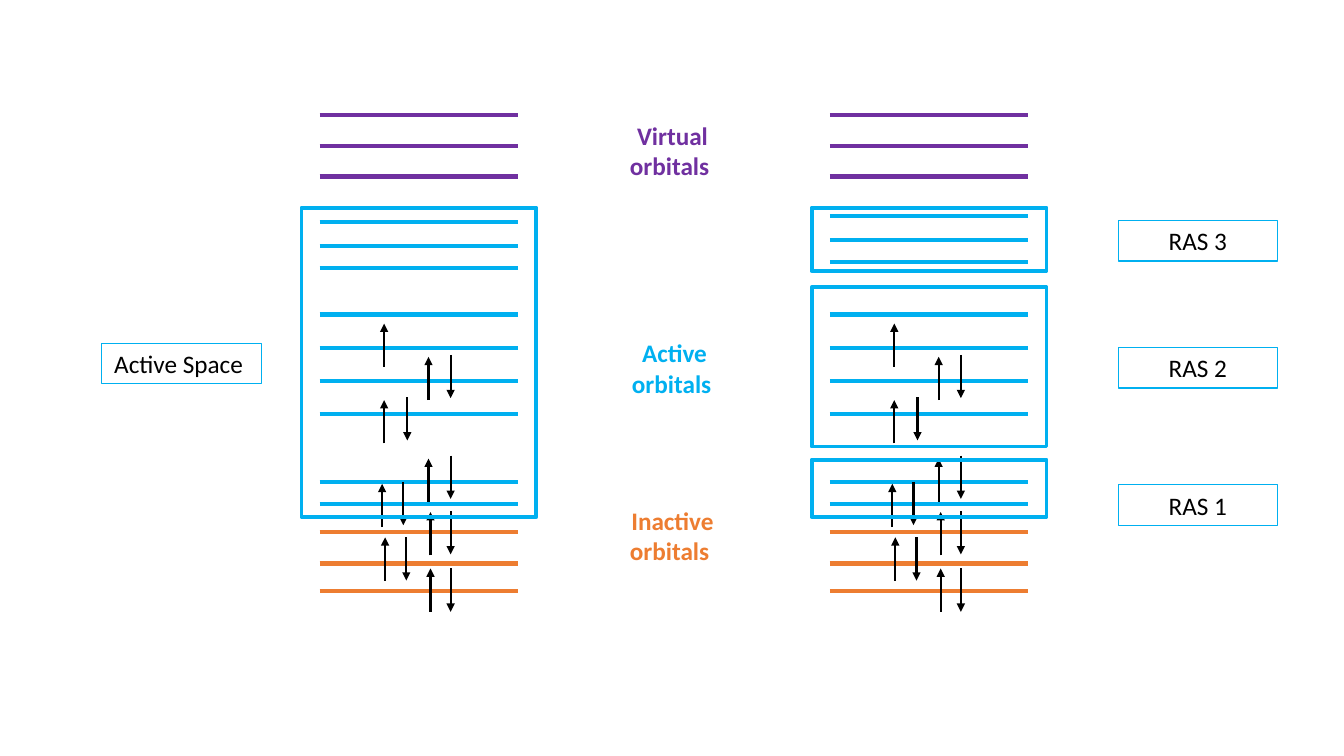
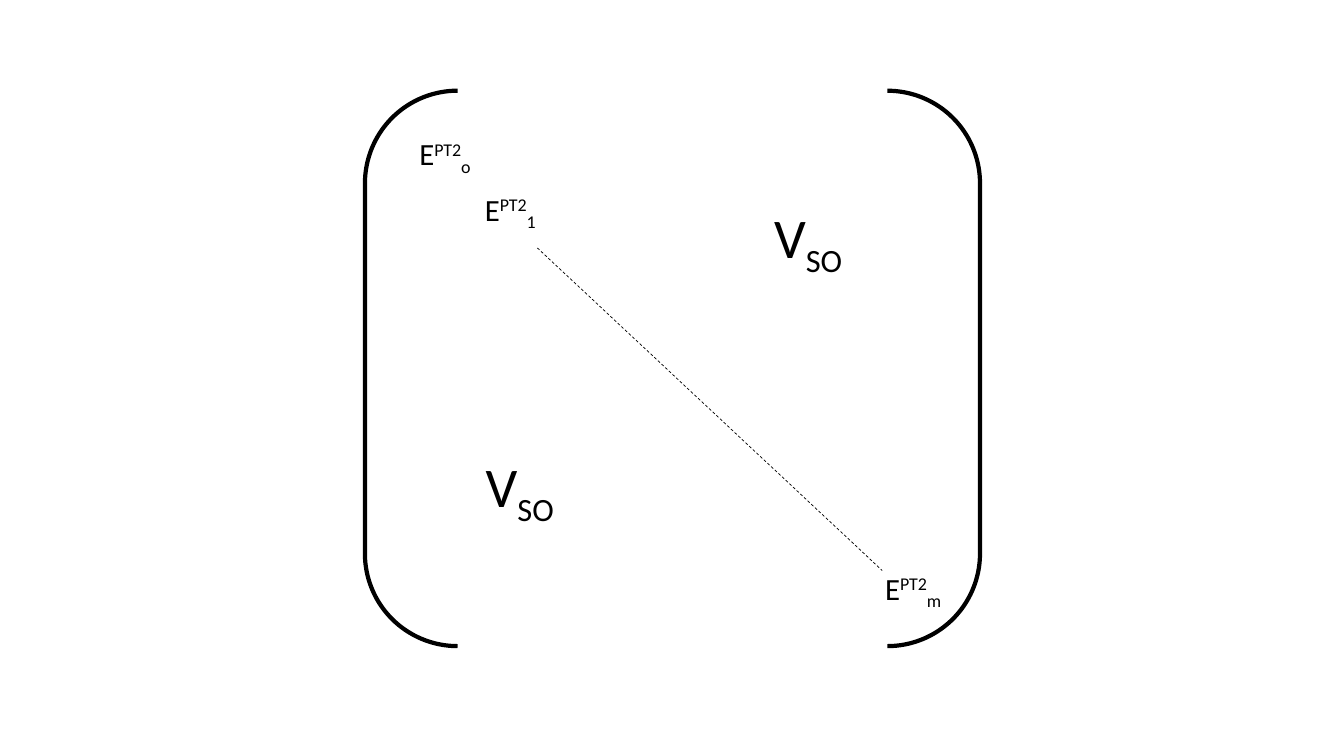
from lxml import etree
from pptx import Presentation
from pptx import util as u
from pptx.dml.color import RGBColor
from pptx.enum import dml, shapes, text
from pptx.oxml import ns

FONT = "Calibri"
BLACK, VIOLET, BLUE, ORANGE = "000000", "7030A0", "00B0F0", "ED7D31"
SUPER, SUB = 30, -25

LEVEL_INSET, LEVEL_WIDTH, FRAME_WIDTH = 0.18, 1.97, 2.33
VIRTUAL_LEVELS = (0, 0.31, 0.61)
UPPER_LEVELS = (0, 0.24, 0.46)
ACTIVE_LEVELS = (1.98, 2.31, 2.64, 2.97, 3.64, 3.86)
INACTIVE_LEVELS = (4.14, 4.45, 4.72)
ARROW_LENGTH = 0.43
UP_ARROWS = ((0.82, 2.07), (1.26, 2.4), (0.82, 2.83), (1.26, 3.41),
             (0.8, 3.66), (1.28, 3.94), (0.83, 4.19), (1.28, 4.5))
DOWN_ARROWS = ((1.48, 2.38), (1.05, 2.8), (1.48, 3.38), (1.01, 3.64),
               (1.48, 3.93), (1.04, 4.19), (1.48, 4.5))


def paint(target, color):
    """Give a line, fill or font a solid colour from a hex string."""
    if hasattr(target, "solid"):
        target.solid()
        target = target.fore_color
    else:
        target = target.color
    target.rgb = RGBColor.from_string(color)


def add_line(page, start, end, color, width, arrow=False, dashed=False):
    """Draw a straight line, with an optional arrowhead or dashes."""
    points = [u.Inches(value) for value in (*start, *end)]
    line = page.shapes.add_connector(shapes.MSO_CONNECTOR.STRAIGHT, *points)
    paint(line.line, color)
    line.line.width = u.Pt(width)
    if dashed:
        line.line.dash_style = dml.MSO_LINE.DASH
    if arrow:
        outline = line.line.fill and line.element.spPr.find(ns.qn("a:ln"))
        etree.SubElement(outline, ns.qn("a:tailEnd"), type="triangle")
    etree.SubElement(line.element.spPr, ns.qn("a:effectLst"))


def add_outline(page, bounds, color, width, kind=shapes.MSO_SHAPE.RECTANGLE):
    """Draw an unfilled preset shape."""
    outline = page.shapes.add_shape(kind, *map(u.Inches, bounds))
    outline.shadow.inherit = False
    outline.fill.background()
    paint(outline.line, color)
    outline.line.width = u.Pt(width)
    return outline


def write(box, spans, size, color=BLACK, bold=False, centered=True):
    """Fill a box with one paragraph of (wording, baseline percent) spans."""
    box.text_frame.word_wrap = True
    box.text_frame.auto_size = text.MSO_AUTO_SIZE.SHAPE_TO_FIT_TEXT
    para = box.text_frame.paragraphs[0]
    para.alignment = text.PP_ALIGN.CENTER if centered else text.PP_ALIGN.LEFT
    para.font.name, para.font.size, para.font.bold = FONT, u.Pt(size), bold
    paint(para.font, color)
    for wording, baseline in spans:
        span = para.add_run()
        span.text = wording
        if baseline:
            span._r.get_or_add_rPr().set("baseline", str(baseline * 1000))


def add_text(page, bounds, spans, size, **style):
    """Place a text box."""
    write(page.shapes.add_textbox(*map(u.Inches, bounds)), spans, size, **style)


def add_tag(page, left, top, wording):
    """Place a thinly outlined name for an orbital space."""
    write(add_outline(page, (left, top, 1.58, 0.4), BLUE, 0.75), [(wording, 0)], 18)


def orbital_column(page, left, top, upper_start, frames):
    """Draw energy levels, electrons and the frames of the active spaces."""
    upper = [upper_start + step for step in UPPER_LEVELS]
    for color, levels in ((VIOLET, VIRTUAL_LEVELS), (BLUE, upper),
                          (BLUE, ACTIVE_LEVELS), (ORANGE, INACTIVE_LEVELS)):
        for level in levels:
            start = left + LEVEL_INSET
            add_line(page, (start, top + level),
                     (start + LEVEL_WIDTH, top + level), color, 3)
    for across, down in UP_ARROWS:
        tip = (left + across, top + down)
        add_line(page, (tip[0], tip[1] + ARROW_LENGTH), tip, BLACK, 1.5, arrow=True)
    for across, down in DOWN_ARROWS:
        start = (left + across, top + down)
        add_line(page, start, (start[0], start[1] + ARROW_LENGTH), BLACK, 1.5, arrow=True)
    for down, height in frames:
        add_outline(page, (left, top + down, FRAME_WIDTH, height), BLUE, 2.75)


def orbital_slide(page):
    """Compare one active space with three restricted active spaces."""
    top = 1.14
    orbital_column(page, 2.99, top, 1.06, [(0.92, 3.07)])
    orbital_column(page, 8.05, top, 1, [(0.92, 0.63), (1.71, 1.58), (3.42, 0.57)])
    add_tag(page, 1.01, 3.41, "Active Space ")
    for tag_top, wording in ((2.19, "RAS 3"), (3.45, "RAS 2"), (4.81, "RAS 1")):
        add_tag(page, 11.09, tag_top, wording)
    for left, label_top, wording, color in (
            (5.9, 1.14, "Virtual orbitals ", VIOLET),
            (5.92, 3.3, "Active orbitals ", BLUE),
            (5.9, 4.96, "Inactive orbitals ", ORANGE)):
        add_text(page, (left, label_top, 1.54, 0.71), [(wording, 0)], 18,
                 color=color, bold=True)


def matrix(page, left, top, width, height):
    """Draw a bracketed matrix with energies on its diagonal."""
    add_outline(page, (left, top, width, height), BLACK, 3,
                shapes.MSO_SHAPE.DOUBLE_BRACKET)
    add_line(page, (left + 1.71, top + 1.56), (left + 5.13, top + 4.76),
             BLACK, 0.5, dashed=True)
    for across, down, index in ((0.44, 0.39, "o"), (1.09, 0.94, "1"), (5.06, 4.7, "m")):
        add_text(page, (left + across, top + down, 1.25, 0.47),
                 [("E", 0), ("PT2", SUPER), (index, SUB)], 22, centered=False)
    for across, down in ((2.88, 1.06), (0.02, 3.53)):
        add_text(page, (left + across, top + down, 3.03, 0.77),
                 [("V", 0), ("SO", SUB)], 40)


def main():
    """Build and save the deck."""
    deck = Presentation()
    deck.slide_width, deck.slide_height = u.Inches(13.33), u.Inches(7.5)
    blank = deck.slide_layouts[6]
    orbital_slide(deck.slides.add_slide(blank))
    matrix(deck.slides.add_slide(blank), 3.62, 0.9, 6.1, 5.51)
    deck.save("out.pptx")


if __name__ == "__main__":
    main()
